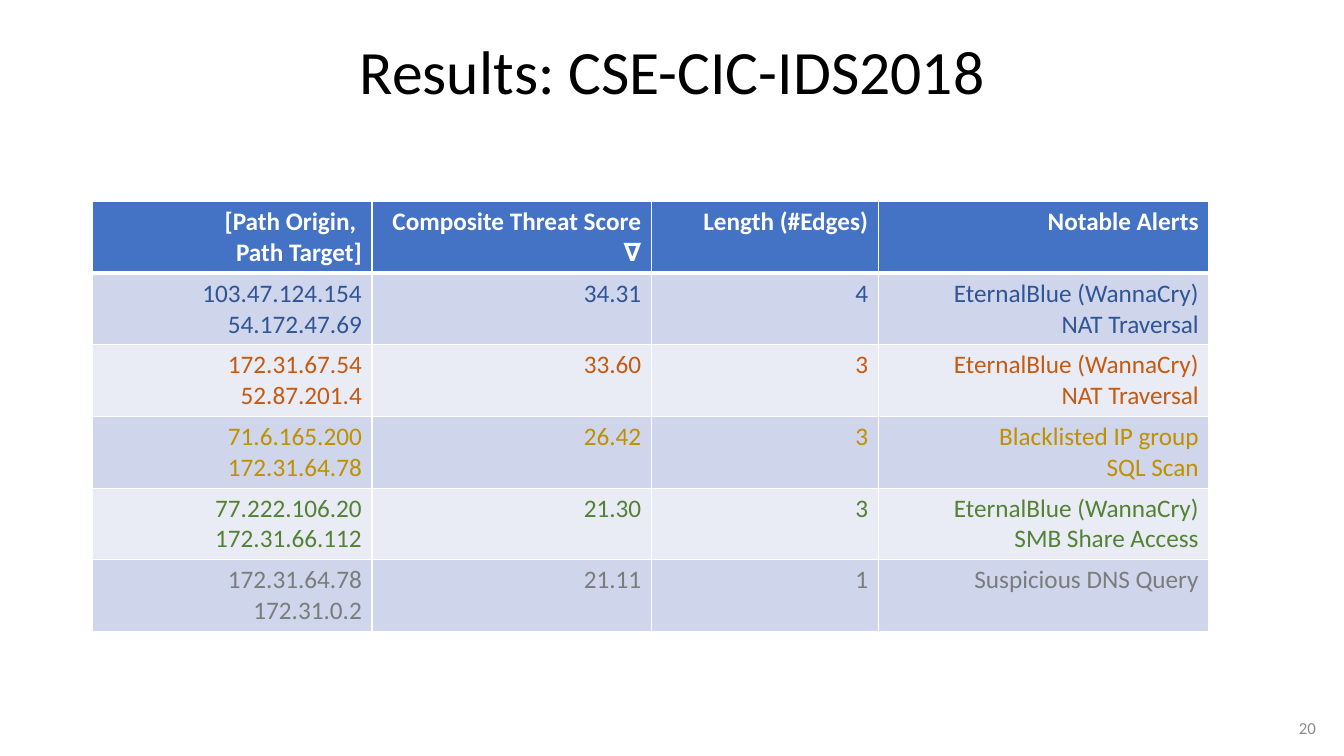
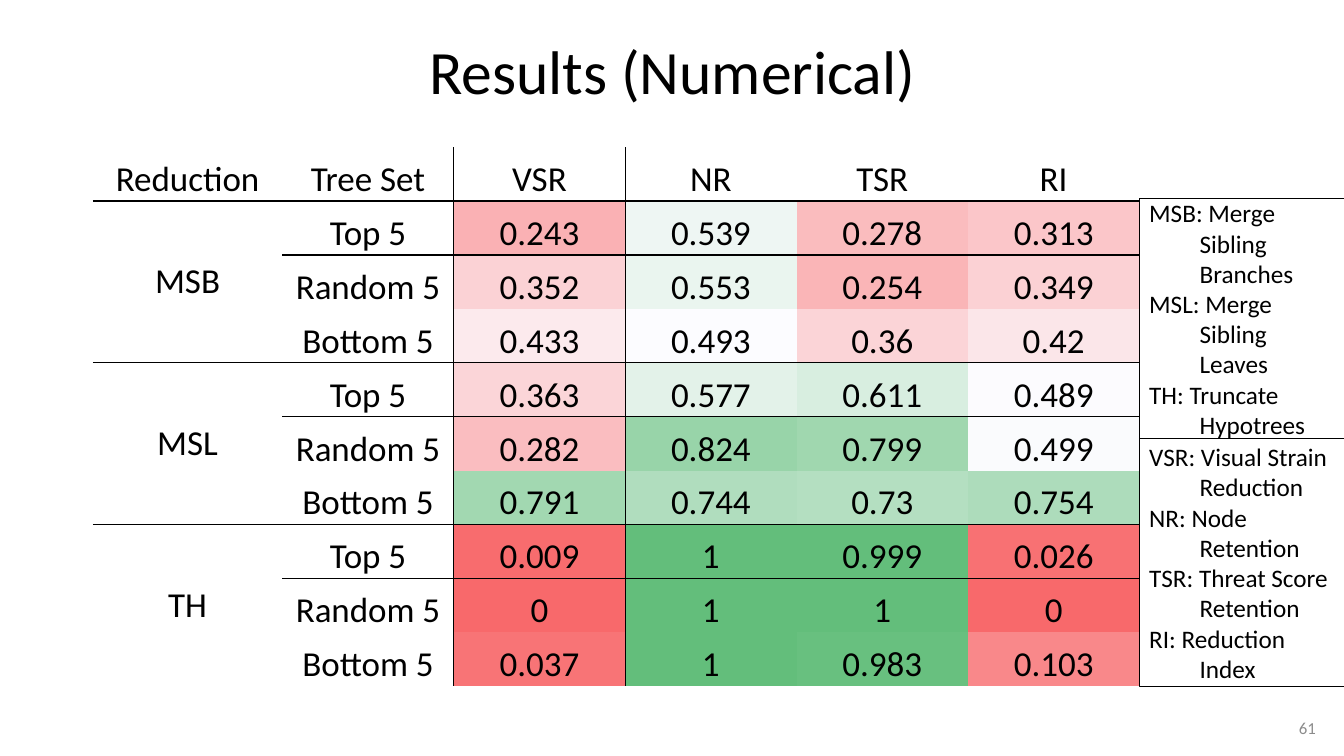
from lxml.etree import SubElement
from pptx import Presentation
from pptx.dml.color import RGBColor
from pptx.enum.shapes import MSO_SHAPE
from pptx.enum.text import MSO_ANCHOR, MSO_AUTO_SIZE, PP_ALIGN
from pptx.oxml.ns import qn
from pptx.util import Inches, Pt

BLACK, WHITE, GREY = "000000", "FFFFFF", "8C8C8C"
HEADER_BLUE, BAND_DARK, BAND_LIGHT = "4472C4", "CFD5EA", "E9EBF5"
SCALE_LOW, SCALE_MIDDLE, SCALE_HIGH = "F8696B", "FCFCFF", "63BE7B"
SCALE_MIDPOINT = 0.493
NO_TABLE_STYLE = "{2D5ABB26-0587-4C30-8999-92F81FD0307C}"

THREAT_HEADER = ["[Path Origin, \nPath Target]", "Composite Threat Score\n∇",
                 "Length (#Edges)", "Notable Alerts"]
THREAT_PATHS = [
    ("2F5597", ["103.47.124.154\n54.172.47.69", "34.31", "4",
                "EternalBlue (WannaCry)\nNAT Traversal"]),
    ("C55A11", ["172.31.67.54\n52.87.201.4", "33.60", "3",
                "EternalBlue (WannaCry)\nNAT Traversal"]),
    ("BF9000", ["71.6.165.200\n172.31.64.78", "26.42", "3",
                "Blacklisted IP group\nSQL Scan"]),
    ("548235", ["77.222.106.20\n172.31.66.112", "21.30", "3",
                "EternalBlue (WannaCry)\nSMB Share Access"]),
    ("7C7C7C", ["172.31.64.78\n172.31.0.2", "21.11", "1", "Suspicious DNS Query"]),
]

SCORE_HEADER = ["Reduction", "Tree Set", "VSR", "NR", "TSR", "RI"]
TREE_SETS = ["Top 5", "Random 5", "Bottom 5"]
SCORES = {
    "MSB": [["0.243", "0.539", "0.278", "0.313"],
            ["0.352", "0.553", "0.254", "0.349"],
            ["0.433", "0.493", "0.36", "0.42"]],
    "MSL": [["0.363", "0.577", "0.611", "0.489"],
            ["0.282", "0.824", "0.799", "0.499"],
            ["0.791", "0.744", "0.73", "0.754"]],
    "TH": [["0.009", "1", "0.999", "0.026"],
           ["0", "1", "1", "0"],
           ["0.037", "1", "0.983", "0.103"]],
}
REDUCTION_LEGEND = ["MSB: Merge Sibling Branches", "MSL: Merge Sibling Leaves",
                    "TH: Truncate Hypotrees"]
METRIC_LEGEND = ["VSR: Visual Strain Reduction", "NR: Node Retention",
                 "TSR: Threat Score Retention", "RI: Reduction Index"]


def color(value):
    """Turn a hex string into a colour."""
    return RGBColor.from_string(value)


def apply(target, formats):
    """Set every attribute named in a dict of format values."""
    for name, value in formats.items():
        setattr(target, name, value)


def heat_color(score):
    """Return the hex colour of a score on the red, white and green scale."""
    if score <= SCALE_MIDPOINT:
        start, end, share = SCALE_LOW, SCALE_MIDDLE, score / SCALE_MIDPOINT
    else:
        start, end = SCALE_MIDDLE, SCALE_HIGH
        share = (score - SCALE_MIDPOINT) / (1 - SCALE_MIDPOINT)
    pairs = zip(color(start), color(end))
    return "".join(f"{round(low + (high - low) * share):02X}" for low, high in pairs)


class Deck:
    """Hold the shared style and the current slide."""

    font_name = "Calibri"

    def __init__(self):
        """Start a widescreen presentation."""
        self.presentation = Presentation()
        apply(self.presentation, {"slide_width": Inches(13.33),
                                  "slide_height": Inches(7.5)})
        self.slide = None

    def add_slide(self, title, number):
        """Add a slide with its title and page number."""
        layout = self.presentation.slide_layouts[5]
        self.slide = self.presentation.slides.add_slide(layout)
        shape = self.slide.shapes.title
        apply(shape, {"left": Inches(0.92), "top": Inches(0.01),
                      "width": Inches(11.5), "height": Inches(1.45)})
        self.fill_text(shape.text_frame, title, 44, BLACK, PP_ALIGN.CENTER,
                       line_spacing=0.9)
        box = self.slide.shapes.add_textbox(*map(Inches, (10.15, 7.02, 3, 0.4)))
        self.fill_text(box.text_frame, number, 12, GREY, PP_ALIGN.RIGHT)

    def style_text(self, text_frame, size, text_color, alignment, bold=False, **spacing):
        """Format every paragraph of a text frame."""
        for paragraph in text_frame.paragraphs:
            apply(paragraph, {"alignment": alignment, **spacing})
            apply(paragraph.font, {"name": self.font_name, "size": Pt(size), "bold": bold})
            paragraph.font.color.rgb = color(text_color)

    def fill_text(self, text_frame, text, size, text_color, alignment, **spacing):
        """Fill a shape with wrapped, vertically centred text."""
        apply(text_frame, {"text": text, "word_wrap": True,
                           "auto_size": MSO_AUTO_SIZE.NONE,
                           "vertical_anchor": MSO_ANCHOR.MIDDLE})
        self.style_text(text_frame, size, text_color, alignment, **spacing)

    def add_legend(self, top, height, entries):
        """Add an outlined box of entries with hanging indents."""
        shape = self.slide.shapes.add_shape(
            MSO_SHAPE.RECTANGLE, *map(Inches, (11.3, top, 2.03, height)))
        shape.shadow.inherit = False
        shape.fill.background()
        shape.line.color.rgb = color(BLACK)
        shape.line.width = Pt(0.25)
        self.fill_text(shape.text_frame, "\n".join(entries), 18, BLACK, PP_ALIGN.LEFT)
        for paragraph in shape.text_frame.paragraphs:
            properties = paragraph._p.get_or_add_pPr()
            properties.set("marL", str(Inches(0.5)))
            properties.set("indent", str(Inches(-0.5)))

    def add_table(self, left, top, column_widths, row_height, row_count):
        """Add an unstyled table and return it."""
        height = row_height * row_count
        frame = self.slide.shapes.add_table(
            row_count, len(column_widths),
            *map(Inches, (left, top, sum(column_widths), height)))
        table = frame.table
        apply(table, {"first_row": False, "horz_banding": False})
        table._tbl.tblPr.find(qn("a:tableStyleId")).text = NO_TABLE_STYLE
        for column, width in zip(table.columns, column_widths):
            column.width = Inches(width)
        for row in table.rows:
            row.height = Inches(row_height)
        return table

    def fill_cell(self, cell, text, size, text_color, alignment, fill=None,
                  bold=False, borders=None, border_color=BLACK, formats=None):
        """Fill and format one table cell."""
        cell.text = text
        self.style_text(cell.text_frame, size, text_color, alignment, bold)
        apply(cell, formats or {})
        properties = cell._tc.get_or_add_tcPr()
        for side in "LRTB":
            width = (borders or {}).get(side)
            if width:
                line = SubElement(properties, qn(f"a:ln{side}"), w=str(Pt(width)))
                solid = SubElement(line, qn("a:solidFill"))
                SubElement(solid, qn("a:srgbClr"), val=border_color)
        if fill:
            cell.fill.solid()
            cell.fill.fore_color.rgb = color(fill)
        else:
            cell.fill.background()

    def add_threat_table(self):
        """Add the table of the highest scored paths."""
        rows = [(WHITE, THREAT_HEADER)] + THREAT_PATHS
        table = self.add_table(0.92, 2, [2.77, 2.77, 2.25, 3.28], 0.7, len(rows))
        for row, (text_color, texts) in enumerate(rows):
            header = row == 0
            band = BAND_DARK if row % 2 else BAND_LIGHT
            borders = {"L": 1, "R": 1, "T": 3 if row == 1 else 1, "B": 3 if header else 1}
            for column, text in enumerate(texts):
                self.fill_cell(table.cell(row, column), text, 18, text_color,
                               PP_ALIGN.RIGHT, HEADER_BLUE if header else band,
                               header, borders, WHITE)

    def add_score_table(self):
        """Add the heat map table, grouped by reduction."""
        rows = [SCORE_HEADER]
        for reduction, group in SCORES.items():
            for index, scores in enumerate(group):
                rows.append(["" if index else reduction, TREE_SETS[index], *scores])
        table = self.add_table(0.92, 1.46, [1.88] + [1.7] * 5, 0.535, len(rows))
        rules = {0: 1, 3: 0.5, 6: 0.5}
        tight = {"margin_left": Inches(0.01), "margin_right": Inches(0.01),
                 "margin_top": Inches(0.01), "margin_bottom": 0,
                 "vertical_anchor": MSO_ANCHOR.BOTTOM}
        centred = {"vertical_anchor": MSO_ANCHOR.MIDDLE}
        for row, texts in enumerate(rows):
            for column, text in enumerate(texts):
                scored = row > 0 and column > 1
                borders = {"T": rules.get(row - 1), "B": rules.get(row),
                           "R": 1 if column == 1 else None,
                           "L": 1 if column == 2 else None}
                self.fill_cell(table.cell(row, column), text, 25, BLACK, PP_ALIGN.CENTER,
                               heat_color(float(text)) if scored else None,
                               borders=borders,
                               formats=centred if row and column == 0 else tight)
        for first in range(1, len(rows), len(TREE_SETS)):
            table.cell(first, 0).merge(table.cell(first + len(TREE_SETS) - 1, 0))


def main():
    """Build and save both result slides."""
    deck = Deck()
    deck.add_slide("Results: CSE-CIC-IDS2018", "20")
    deck.add_threat_table()
    deck.add_slide("Results (Numerical)", "61")
    deck.add_score_table()
    deck.add_legend(4.35, 2.46, METRIC_LEGEND)
    deck.add_legend(1.97, 2.38, REDUCTION_LEGEND)
    deck.presentation.save("out.pptx")


if __name__ == "__main__":
    main()
